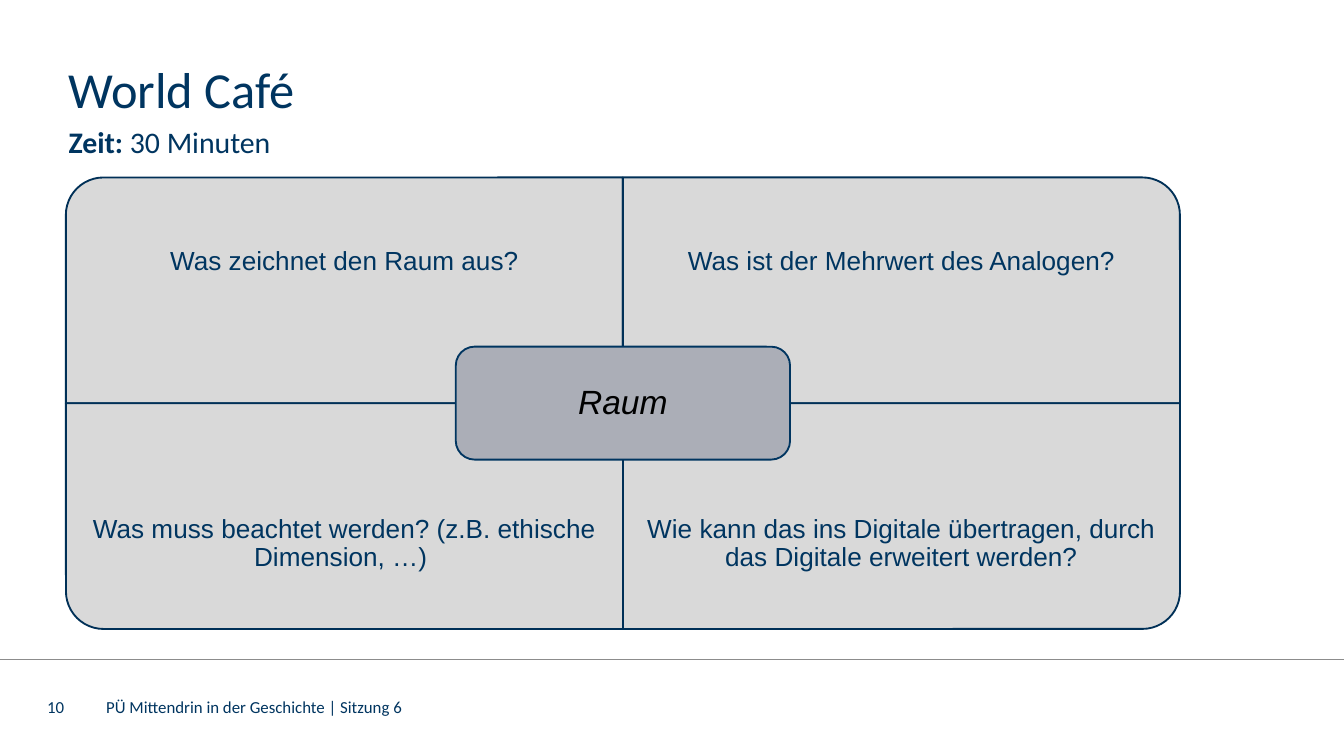
from lxml.etree import SubElement
from pptx import Presentation
from pptx.dml.color import RGBColor
from pptx.enum.shapes import MSO_CONNECTOR, MSO_SHAPE
from pptx.enum.text import MSO_ANCHOR, MSO_AUTO_SIZE, PP_ALIGN
from pptx.oxml.ns import qn
from pptx.util import Inches, Pt

COLORS = {
    "text": "003560",
    "outline": "003057",
    "quadrant": "D9D9D9",
    "center": "ABAEB7",
    "center_text": "000000",
    "rule": "8C8C8C",
}
QUESTIONS = [
    ["Was zeichnet den Raum aus?", "Was ist der Mehrwert des Analogen?"],
    ["Was muss beachtet werden? (z.B. ethische Dimension, …) ",
     "Wie kann das ins Digitale übertragen, durch das Digitale erweitert werden?"],
]
ROTATIONS = [[270, 0], [180, 90]]


def color(name):
    return RGBColor.from_string(COLORS[name])


def place(shape, left, top, width, height):
    for name, value in zip(("left", "top", "width", "height"), (left, top, width, height)):
        setattr(shape, name, Inches(value))


def format_frame(frame, anchor, inset=0):
    values = {"word_wrap": True, "auto_size": MSO_AUTO_SIZE.NONE, "vertical_anchor": anchor}
    for side in ("left", "top", "right", "bottom"):
        values[f"margin_{side}"] = Inches(inset)
    for name, value in values.items():
        setattr(frame, name, value)


def add_span(para, text, size, font="Calibri", fill="text", **styles):
    span = para.add_run()
    span.text = text
    for name, value in {"size": Pt(size), "name": font, **styles}.items():
        setattr(span.font, name, value)
    span.font.color.rgb = color(fill)


def add_label(shapes, box, text, size, inset=0, align=PP_ALIGN.LEFT, spacing=1.0, **styles):
    label = shapes.add_textbox(*map(Inches, box))
    format_frame(label.text_frame, MSO_ANCHOR.MIDDLE, inset)
    para = label.text_frame.paragraphs[0]
    para.alignment = align
    para.line_spacing = spacing
    add_span(para, text, size, **styles)


def add_panel(shapes, kind, box, fill, outline, rotation=0):
    panel = shapes.add_shape(kind, *map(Inches, box))
    panel.shadow.inherit = False
    panel.fill.solid()
    panel.fill.fore_color.rgb = color(fill)
    panel.line.color.rgb = color(outline)
    panel.line.width = Pt(1)
    panel.rotation = rotation


def add_heading(page, left, top, width):
    title, body = page.shapes.title, page.placeholders[1]
    place(title, left, top, width, 0.51)
    format_frame(title.text_frame, MSO_ANCHOR.TOP)
    para = title.text_frame.paragraphs[0]
    para.alignment = PP_ALIGN.LEFT
    add_span(para, "World Café", 27)

    place(body, left, top + 0.51, width, 3.68)
    format_frame(body.text_frame, MSO_ANCHOR.TOP)
    para = body.text_frame.paragraphs[0]
    properties = para._p.get_or_add_pPr()
    properties.set("marL", "0")
    properties.set("indent", "0")
    SubElement(properties, qn("a:buNone"))
    para.line_spacing, para.space_before, para.space_after = Pt(18), Pt(0), Pt(12)
    add_span(para, "Zeit: ", 16, bold=True)
    add_span(para, "30 Minuten", 16, bold=False)


def add_matrix(page, left, top, width, height):
    """Four question quadrants, rounded at the outer corners, around a central topic."""
    shapes = page.shapes.add_group_shape().shapes
    cell_width, cell_height = width / 2, height / 2
    text_height = cell_height * 0.75
    question_style = {"font": "Arial", "align": PP_ALIGN.CENTER, "spacing": 0.9}
    for row, questions in enumerate(QUESTIONS):
        for column, question in enumerate(questions):
            x, y = left + column * cell_width, top + row * cell_height
            rotation = ROTATIONS[row][column]
            sideways = rotation % 180 != 0
            panel_width, panel_height = (
                (cell_height, cell_width) if sideways else (cell_width, cell_height))
            panel_box = (x + (cell_width - panel_width) / 2,
                         y + (cell_height - panel_height) / 2, panel_width, panel_height)
            add_panel(shapes, MSO_SHAPE.ROUND_1_RECTANGLE, panel_box,
                      "quadrant", "outline", rotation)
            text_top = y + row * (cell_height - text_height)
            add_label(shapes, (x, text_top, cell_width, text_height), question, 14,
                      inset=0.11, **question_style)

    topic_width, topic_height = width * 0.3, height / 4
    topic_left = left + (width - topic_width) / 2
    topic_top = top + (height - topic_height) / 2
    add_panel(shapes, MSO_SHAPE.ROUNDED_RECTANGLE,
              (topic_left, topic_top, topic_width, topic_height), "center", "text")
    pad = 0.04
    add_label(shapes, (topic_left + pad, topic_top + pad,
                       topic_width - 2 * pad, topic_height - 2 * pad),
              "Raum", 18, inset=0.07, fill="center_text", italic=True, **question_style)


def add_footer(page, top, width):
    rule = page.shapes.add_connector(
        MSO_CONNECTOR.STRAIGHT, 0, Inches(top), Inches(width), Inches(top))
    rule.line.color.rgb = color("rule")
    rule.line.width = Pt(0.5)
    SubElement(rule._element.spPr, qn("a:effectLst"))
    add_label(page.shapes, (0.35, top + 0.29, 0.28, 0.12), "10", 9)
    add_label(page.shapes, (0.79, top + 0.29, 6.02, 0.12),
              "PÜ Mittendrin in der Geschichte | Sitzung 6", 9)


def main():
    deck = Presentation()
    deck.slide_width = Inches(10)
    deck.slide_height = deck.slide_width * 9 // 16
    page = deck.slides.add_slide(deck.slide_layouts[1])
    add_footer(page, 4.91, 10)
    add_heading(page, 0.51, 0.43, 8.27)
    add_matrix(page, 0.49, 1.32, 8.29, 3.36)
    deck.save("out.pptx")


if __name__ == "__main__":
    main()
